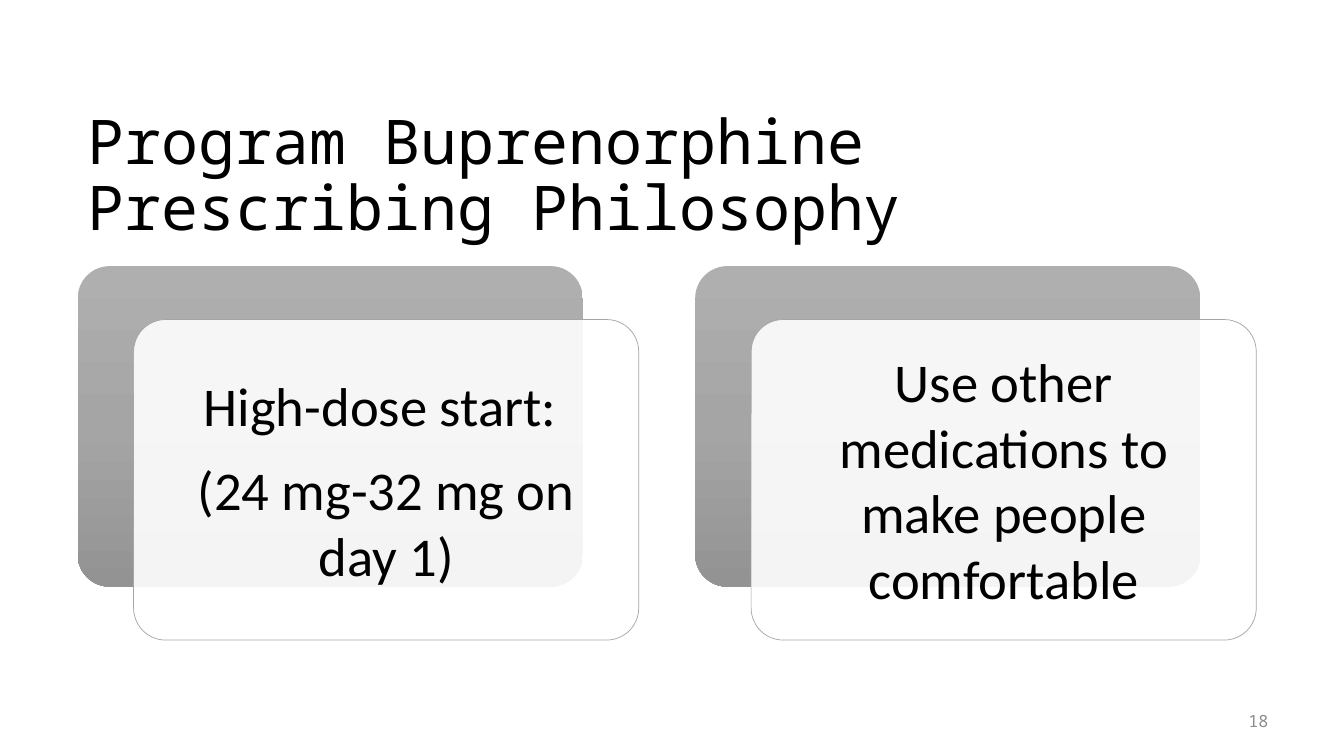
from copy import deepcopy
from pptx import Presentation
from pptx.dml.color import RGBColor
from pptx.enum.shapes import MSO_SHAPE
from pptx.enum.text import MSO_ANCHOR, MSO_AUTO_SIZE, PP_ALIGN
from pptx.oxml.ns import qn
from pptx.util import Inches, Pt
from lxml import etree

ROUND = MSO_SHAPE.ROUNDED_RECTANGLE
MID = MSO_ANCHOR.MIDDLE
LEFT, CENTER, RIGHT = PP_ALIGN.LEFT, PP_ALIGN.CENTER, PP_ALIGN.RIGHT
MONO, SANS = "Noto Sans Mono", "Calibri"
HEX = {"ink": "000000", "page": "8C8C8C", "white": "FFFFFF",
       "light": "AFAFAF", "gray": "A5A5A5", "dark": "939393"}


def color(name):
    return RGBColor.from_string(HEX[name])


def write(box, *lines, size, font, ink="ink", align=LEFT, after=0,
          spacing=1.0, inset=(0.1, 0.05)):
    frame = box.text_frame
    frame.word_wrap = True
    frame.auto_size = MSO_AUTO_SIZE.NONE
    frame.vertical_anchor = MID
    frame.margin_left = frame.margin_right = Inches(inset[0])
    frame.margin_top = frame.margin_bottom = Inches(inset[1])
    for i, line in enumerate(lines):
        para = frame.paragraphs[0] if i == 0 else frame.add_paragraph()
        para.alignment = align
        para.line_spacing = spacing
        para.space_before = Pt(0)
        para.space_after = Pt(after)
        run = para.add_run()
        run.text = line
        run.font.size = Pt(size)
        run.font.name = font
        run.font.color.rgb = color(ink)


prs = Presentation()
prs.slide_width, prs.slide_height = Inches(13.33), Inches(7.5)
slide = prs.slides.add_slide(prs.slide_layouts[5])
shapes = slide.shapes

# Title
title = shapes.title
title.left, title.top = Inches(0.77), Inches(1.01)
title.width, title.height = Inches(11.69), Inches(1.5)
write(title, "Program Buprenorphine Prescribing Philosophy",
      size=44, font=MONO, spacing=0.9)

# Page number
page = shapes.add_textbox(Inches(11.94), Inches(6.95), Inches(0.74), Inches(0.4))
write(page, "18", size=12, font=MONO, ink="page", align=RIGHT, after=6)

# Cards: a gray back plate, a translucent front plate and the text
cards = [("High-dose start: ", "(24 mg-32 mg on day 1)"),
         ("Use other medications to make people comfortable",)]
for i, lines in enumerate(cards):
    left = 0.77 + 6.125 * i
    back, front = [
        shapes.add_shape(ROUND, Inches(left + dx), Inches(top), Inches(5.01), Inches(3.18))
        for dx, top in ((0, 2.64), (0.555, 3.17))]
    for plate in (back, front):
        plate.adjustments[0] = 0.1
        plate.shadow.inherit = False

    back.line.fill.background()
    back.fill.gradient()
    back.fill.gradient_angle = 270
    stops = back.fill.gradient_stops
    for stop, name, pos in zip(stops, ("light", "dark"), (0, 1)):
        stop.color.rgb = color(name)
        stop.position = pos
    first = back.fill._xPr.find(".//" + qn("a:gs"))
    first.addnext(deepcopy(first))
    middle = back.fill.gradient_stops[1]
    middle.color.rgb = color("gray")
    middle.position = 0.5

    front.fill.solid()
    front.fill.fore_color.rgb = color("white")
    tint = front.fill._xPr.find(qn("a:solidFill")).find(qn("a:srgbClr"))
    etree.SubElement(tint, qn("a:alpha"), val="90000")
    front.line.color.rgb = color("gray")
    front.line.width = Pt(0.5)

    label = shapes.add_textbox(Inches(left + 0.65), Inches(3.26), Inches(4.82), Inches(2.99))
    write(label, *lines, size=39, font=SANS, align=CENTER, after=13.65, inset=(0.16, 0.16))

prs.save("out.pptx")
